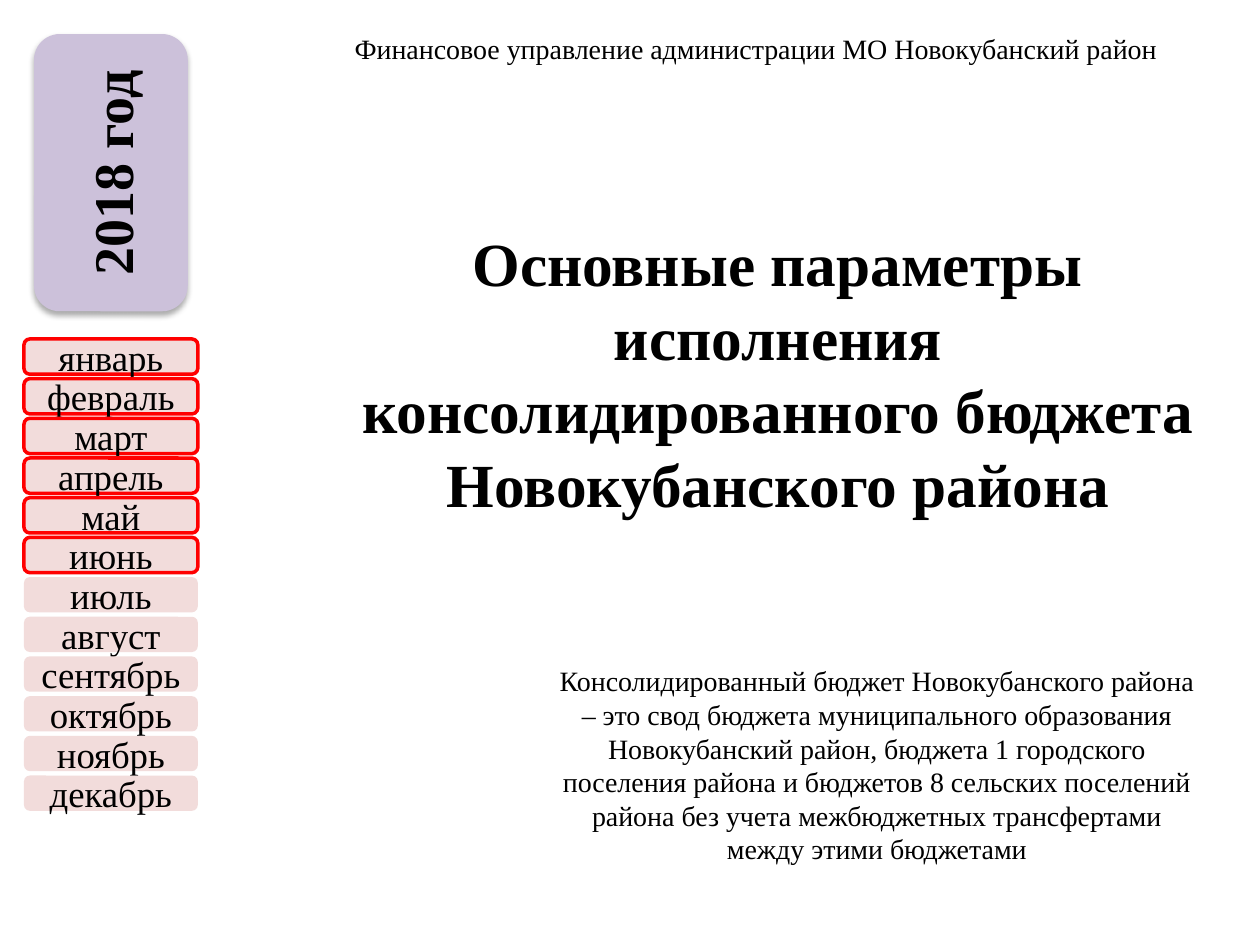
import pptx
import pptx.util
import pptx.dml.color
import pptx.enum.shapes
import pptx.enum.text
import pptx.oxml.ns
from lxml import etree

COLORS = {"text": "000000", "year": "CCC1DA", "month": "F2DCDB", "done": "FF0000"}
MONTHS = ["январь", "февраль", "март", "апрель", "май", "июнь", "июль",
          "август", "сентябрь", "октябрь", "ноябрь", "декабрь"]
REPORTED = 6  # months already reported, outlined in red
COLS, ROWS = 100, 75  # slide grid


class Deck:
    font = "Times New Roman"

    def __init__(self, prs):
        self.prs = prs
        self.s = prs.slides.add_slide(prs.slide_layouts[6])

    def box(self, col, row, cols, rows):
        """Turn grid columns and rows into slide lengths."""
        dx, dy = self.prs.slide_width / COLS, self.prs.slide_height / ROWS
        return [pptx.util.Emu(round(v)) for v in (col * dx, row * dy, cols * dx, rows * dy)]

    def color(self, name):
        return pptx.dml.color.RGBColor.from_string(COLORS[name])

    def set_text(self, sp, text, size, bold=False, middle=False):
        tf = sp.text_frame
        tf.word_wrap = True
        anchor = pptx.enum.text.MSO_ANCHOR
        tf.vertical_anchor = anchor.MIDDLE if middle else anchor.TOP
        p = tf.paragraphs[0]
        p.alignment = pptx.enum.text.PP_ALIGN.CENTER
        r = p.add_run()
        r.text = text
        r.font.name = self.font
        r.font.size = pptx.util.Pt(size)
        r.font.bold = bold
        r.font.color.rgb = self.color("text")

    def text(self, place, text, size, **style):
        sp = self.s.shapes.add_textbox(*self.box(*place))
        self.set_text(sp, text, size, **style)
        return sp

    def button(self, place, text, size, fill, line=None, bold=False):
        kind = pptx.enum.shapes.MSO_SHAPE.ROUNDED_RECTANGLE
        sp = self.s.shapes.add_shape(kind, *self.box(*place))
        sp.shadow.inherit = False
        sp.fill.solid()
        sp.fill.fore_color.rgb = self.color(fill)
        if line:
            sp.line.color.rgb = self.color(line)
            sp.line.width = pptx.util.Pt(2)
        else:
            sp.line.fill.background()
        tf = sp.text_frame
        tf.margin_left = tf.margin_right = tf.margin_top = tf.margin_bottom = 0
        self.set_text(sp, text, size, bold=bold, middle=True)
        return sp

    def drop_shadow(self, sp):
        qn = pptx.oxml.ns.qn
        effects = sp.element.spPr.find(qn("a:effectLst"))
        shadow = etree.SubElement(effects, qn("a:outerShdw"), dir="5400000", rotWithShape="0",
                                  blurRad=str(pptx.util.Pt(3.5)), dist=str(pptx.util.Pt(2.2)))
        color = etree.SubElement(shadow, qn("a:srgbClr"), val=COLORS["text"])
        etree.SubElement(color, qn("a:alpha"), val="32000")


def main():
    prs = pptx.Presentation()
    prs.slide_width = pptx.util.Inches(10)
    prs.slide_height = pptx.util.Inches(7.5)
    deck = Deck(prs)

    # Header
    deck.text((25.6, 2.5, 68.8, 2.7), "Финансовое управление администрации МО Новокубанский район",
              16, middle=True)

    # Year, turned to read upwards
    year = deck.button((-2.2, 7.6, 22, 12.2), "2018 год", 32, "year", bold=True)
    year.rotation = 270
    deck.drop_shadow(year)

    # Month buttons
    for i, month in enumerate(MONTHS):
        deck.button((1.9, 26.9 + 3.15 * i, 13.8, 2.8), month, 21, "month",
                    line="done" if i < REPORTED else None)

    # Title and definition
    deck.text((27, 17.4, 69.5, 24.6), "Основные параметры исполнения консолидированного бюджета "
              "Новокубанского района", 35, bold=True)
    deck.text((42.8, 52.2, 53.6, 17.2), "Консолидированный бюджет Новокубанского района – это свод "
              "бюджета муниципального образования Новокубанский район, бюджета 1 городского поселения "
              "района и бюджетов 8 сельских поселений района без учета межбюджетных трансфертами "
              "между этими бюджетами", 16)

    prs.save("out.pptx")


if __name__ == "__main__":
    main()
